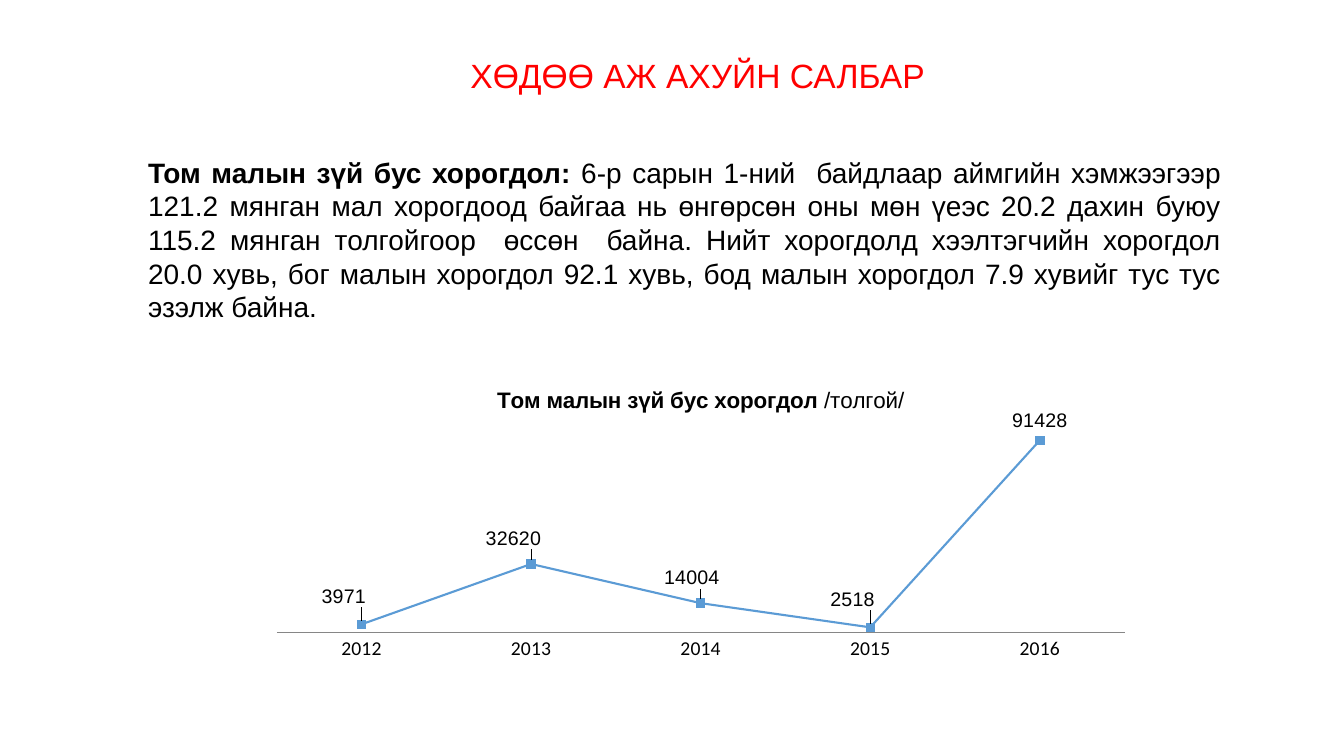
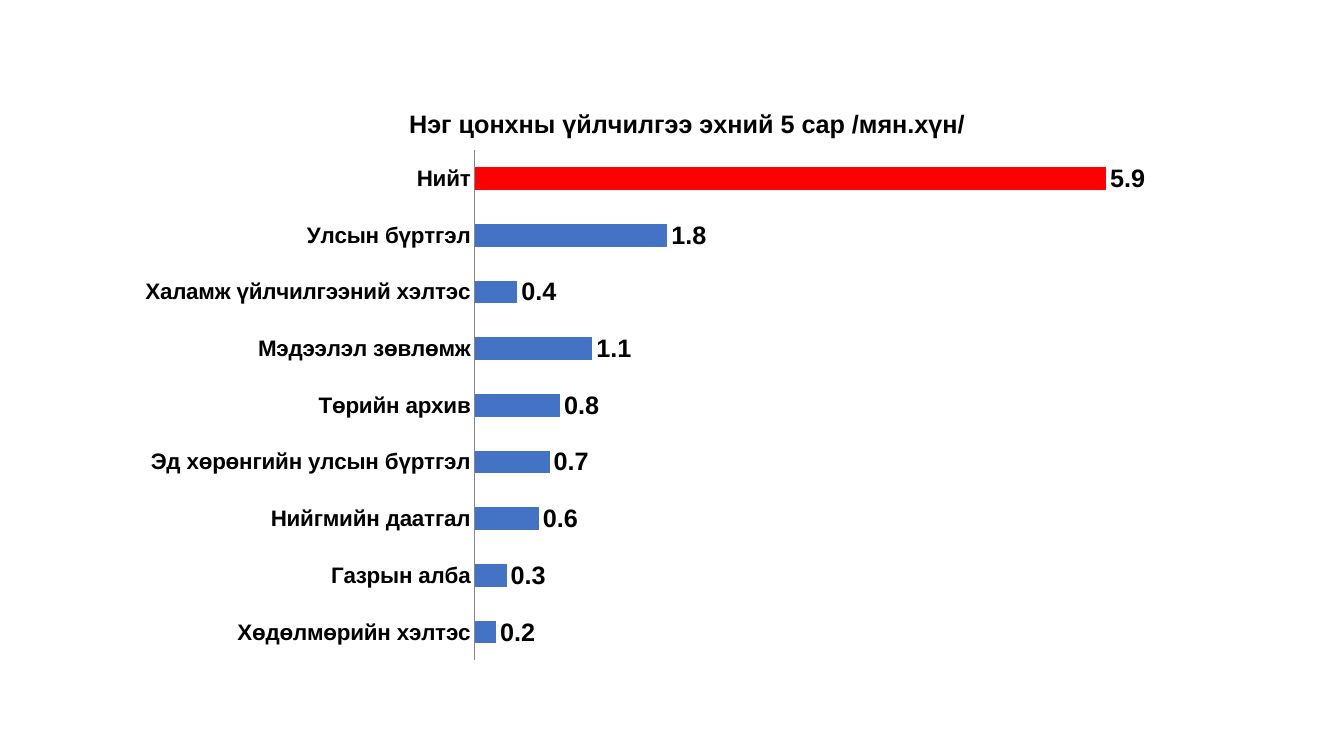
import pptx
import pptx.chart.data
import pptx.dml.color
import pptx.enum.chart
import pptx.enum.text
import pptx.oxml
import pptx.oxml.ns
import pptx.util

Inches = pptx.util.Inches
Pt = pptx.util.Pt
ALIGN = pptx.enum.text.PP_ALIGN
CHART_TYPE = pptx.enum.chart.XL_CHART_TYPE
LABEL_POSITION = pptx.enum.chart.XL_LABEL_POSITION

COLORS = {
    "text": "000000",
    "accent": "FF0000",
    "line": "5B9BD5",
    "bar": "4472C4",
    "axis": "868686",
}
TITLE_BOX = (2.67, 0.3, 8.5, 1.28)
BODY_BOX = (1.37, 1.49, 10.84, 1.78)
LINE_CHART_BOX = (2.57, 3.69, 8.76, 2.94)
BAR_CHART_BOX = (1.27, 0.85, 11.09, 5.82)

LOSSES = {"2012": 3971, "2013": 32620, "2014": 14004, "2015": 2518, "2016": 91428}
LABEL_SHIFTS = [(-0.02, -0.03), (-0.02, -0.02), (-0.01, -0.02), (-0.02, -0.03), (0, 0)]
SERVICES = {
    "Хөдөлмөрийн хэлтэс": 0.2,
    "Газрын алба": 0.3,
    "Нийгмийн даатгал": 0.6,
    "Эд хөрөнгийн улсын бүртгэл": 0.7,
    "Төрийн архив": 0.8,
    "Мэдээлэл зөвлөмж": 1.1,
    "Халамж үйлчилгээний хэлтэс": 0.4,
    "Улсын бүртгэл": 1.8,
    "Нийт": 5.9,
}


def rgb(name):
    return pptx.dml.color.RGBColor.from_string(COLORS[name])


def set_font(font, size, bold=False, name="Arial", color="text"):
    font.size = Pt(size)
    font.bold = bold
    font.name = name
    font.color.rgb = rgb(color)


def write_text(text_frame, parts, size, color="text", align=ALIGN.CENTER, line_spacing=None):
    paragraph = text_frame.paragraphs[0]
    paragraph.alignment = align
    paragraph.line_spacing = line_spacing
    for text, bold in parts:
        run = paragraph.add_run()
        run.text = text
        set_font(run.font, size, bold, color=color)


def add_layout(parent, position, tags):
    for old_layout in parent.findall(pptx.oxml.ns.qn("c:layout")):
        parent.remove(old_layout)
    children = "".join(f'<c:{tag} val="{value}"/>' for tag, value in tags)
    layout = pptx.oxml.parse_xml(
        f'<c:layout {pptx.oxml.ns.nsdecls("c")}>'
        f"<c:manualLayout>{children}</c:manualLayout></c:layout>"
    )
    parent.insert(position, layout)


def add_title(slide, box, text):
    title = slide.shapes.title
    title.left, title.top, title.width, title.height = map(Inches, box)
    text_frame = title.text_frame
    text_frame.word_wrap = True
    text_frame.vertical_anchor = pptx.enum.text.MSO_ANCHOR.MIDDLE
    text_frame.margin_bottom = Inches(0.4)
    write_text(text_frame, [(text, False)], 24, color="accent", line_spacing=0.9)


def add_body(slide, box, parts):
    text_frame = slide.shapes.add_textbox(*map(Inches, box)).text_frame
    text_frame.word_wrap = True
    write_text(text_frame, parts, 20, align=ALIGN.JUSTIFY, line_spacing=Pt(24))


def add_chart(slide, box, chart_type, values, title_parts, title_size, plot_box, maximum, number_format):
    data = pptx.chart.data.CategoryChartData(number_format=number_format)
    data.categories = list(values)
    data.add_series("Series 1", list(values.values()))
    chart = slide.shapes.add_chart(chart_type, *map(Inches, box), data).chart
    set_font(chart.font, 10, name="Calibri")
    chart.has_legend = False
    chart.has_title = True
    write_text(chart.chart_title.text_frame, title_parts, title_size)
    chart.chart_title.include_in_layout = False
    value_axis = chart.value_axis
    value_axis.minimum_scale = 0
    value_axis.maximum_scale = maximum
    value_axis.has_major_gridlines = False
    value_axis.visible = False
    category_axis = chart.category_axis
    category_axis.major_tick_mark = pptx.enum.chart.XL_TICK_MARK.NONE
    category_axis.format.line.color.rgb = rgb("axis")
    category_axis.format.line.width = Pt(0.75)
    plot = chart.plots[0]
    plot.vary_by_categories = False
    plot.has_data_labels = True
    plot.data_labels.show_value = True
    plot.data_labels.number_format = number_format
    plot.data_labels.number_format_is_linked = False
    tags = [("layoutTarget", "inner"), ("xMode", "edge"), ("yMode", "edge")]
    add_layout(chart.plots[0]._element.getparent(), 0, tags + list(zip("xywh", plot_box)))
    return chart


def add_loss_chart(slide, box):
    chart = add_chart(
        slide, box, CHART_TYPE.LINE_MARKERS, LOSSES,
        [("Том малын зүй бус хорогдол", True), (" /толгой/", False)], 16,
        (0.02, 0.17, 0.96, 0.71), 100000, "General",
    )
    set_font(chart.category_axis.tick_labels.font, 14, name="Calibri")
    plot = chart.plots[0]
    set_font(plot.data_labels.font, 14)
    plot.data_labels.position = LABEL_POSITION.ABOVE
    series = plot.series[0]
    series.smooth = False
    series.format.line.color.rgb = rgb("line")
    series.format.line.width = Pt(1.5)
    marker = series.marker
    marker.style = pptx.enum.chart.XL_MARKER_STYLE.SQUARE
    marker.size = 6
    marker.format.fill.solid()
    marker.format.fill.fore_color.rgb = rgb("line")
    marker.format.line.color.rgb = rgb("line")
    for index, shift in enumerate(LABEL_SHIFTS):
        label = series.points[index].data_label
        set_font(label.font, 14)
        label.position = LABEL_POSITION.ABOVE
    label_elements = series._element.findall(".//" + pptx.oxml.ns.qn("c:dLbl"))
    for label_element, shift in zip(label_elements, LABEL_SHIFTS):
        add_layout(label_element, 1, zip("xy", shift))


def add_service_chart(slide, box):
    chart = add_chart(
        slide, box, CHART_TYPE.BAR_CLUSTERED, SERVICES,
        [("Нэг цонхны үйлчилгээ эхний 5 сар /мян.хүн/", True)], 18,
        (0.31, 0.11, 0.67, 0.87), 7, "0.0",
    )
    set_font(chart.category_axis.tick_labels.font, 16, bold=True)
    plot = chart.plots[0]
    plot.gap_width = 150
    plot.overlap = -25
    set_font(plot.data_labels.font, 18, bold=True)
    plot.data_labels.position = LABEL_POSITION.OUTSIDE_END
    series = plot.series[0]
    total_bar = series.points[len(SERVICES) - 1]
    for item, color in ((series, "bar"), (total_bar, "accent")):
        item.format.fill.solid()
        item.format.fill.fore_color.rgb = rgb(color)


def build_livestock_slide(presentation):
    slide = presentation.slides.add_slide(presentation.slide_layouts[5])
    add_title(slide, TITLE_BOX, "ХӨДӨӨ АЖ АХУЙН САЛБАР")
    add_body(slide, BODY_BOX, [
        ("Том малын зүй бус хорогдол: ", True),
        ("6-р сарын 1-ний  байдлаар аймгийн хэмжээгээр 121.2 мянган мал хорогдоод "
         "байгаа нь өнгөрсөн оны мөн үеэс 20.2 дахин буюу 115.2 мянган толгойгоор  "
         "өссөн  байна. Нийт хорогдолд хээлтэгчийн хорогдол 20.0 хувь, бог малын "
         "хорогдол 92.1 хувь, бод малын хорогдол 7.9 хувийг тус тус эзэлж байна.", False),
    ])
    add_loss_chart(slide, LINE_CHART_BOX)


def build_service_slide(presentation):
    slide = presentation.slides.add_slide(presentation.slide_layouts[6])
    add_service_chart(slide, BAR_CHART_BOX)


def main():
    presentation = pptx.Presentation()
    presentation.slide_width = Inches(13.33)
    presentation.slide_height = Inches(7.5)
    build_livestock_slide(presentation)
    build_service_slide(presentation)
    presentation.save("out.pptx")


if __name__ == "__main__":
    main()
